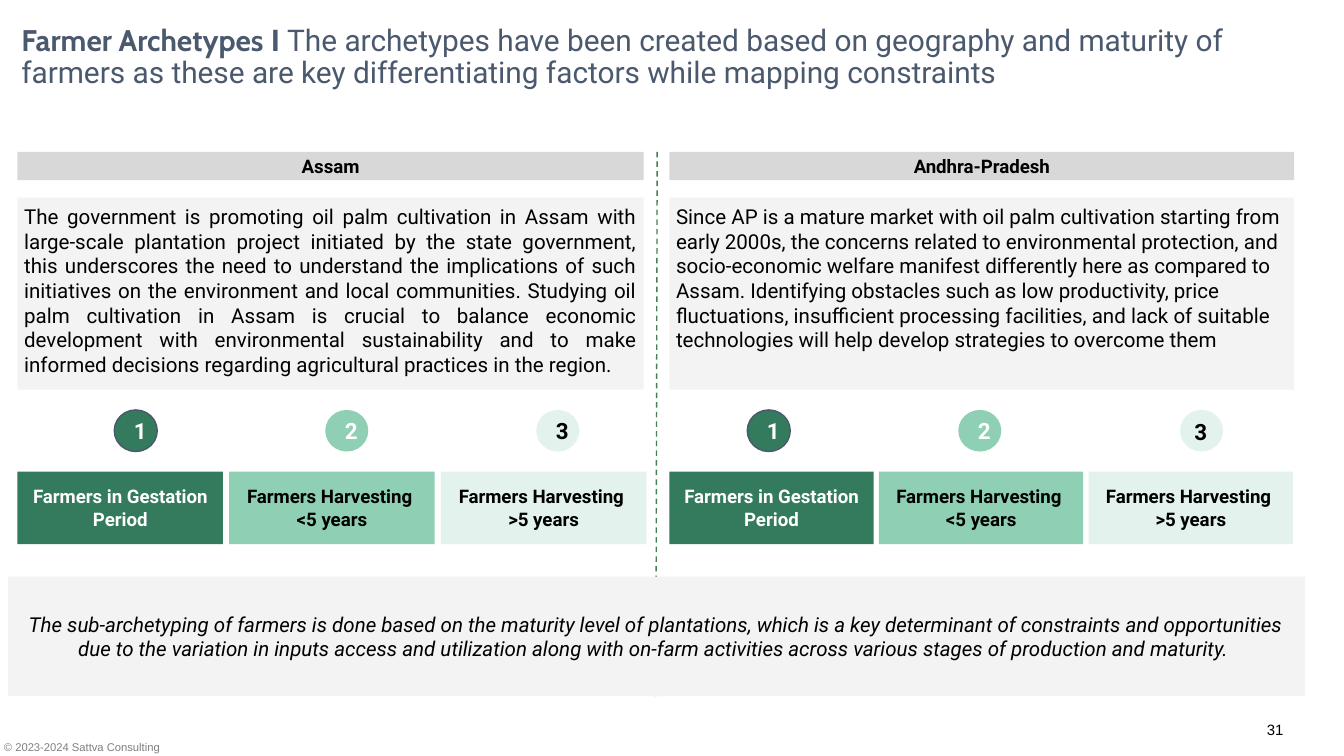
from pptx import Presentation
from pptx.dml.color import RGBColor
from pptx.enum.dml import MSO_LINE
from pptx.enum.shapes import MSO_CONNECTOR, MSO_SHAPE
from pptx.enum.text import MSO_ANCHOR, PP_ALIGN
from pptx.oxml.ns import qn
from pptx.util import Inches, Pt
from lxml import etree

COLORS = {
    "slate": "4A596E", "dark": "347A5C", "mid": "8FCFB4", "pale": "E3F2ED",
    "header": "D8D8D8", "panel": "F3F3F3", "divider": "448050",
    "black": "000000", "white": "FFFFFF", "gray": "7F7F7F",
}
C = {name: RGBColor.from_string(value) for name, value in COLORS.items()}
LEFT, CENTER = PP_ALIGN.LEFT, PP_ALIGN.CENTER
TOP, MIDDLE = MSO_ANCHOR.TOP, MSO_ANCHOR.MIDDLE
RECT, OVAL = MSO_SHAPE.RECTANGLE, MSO_SHAPE.OVAL

# Widescreen slide, 16:9
prs = Presentation()
prs.slide_width = Inches(10)
prs.slide_height = Inches(10) * 9 // 16
s = prs.slides.add_slide(prs.slide_layouts[6])


def write(sp, paragraphs, size, color="black", align=LEFT, anchor=TOP,
          inset=(0.1, 0.1), spacing=None):
    """Fill a shape with paragraphs, each a list of (text, font values)."""
    tf = sp.text_frame
    tf.word_wrap = True
    tf.vertical_anchor = anchor
    tf.margin_left = tf.margin_right = Inches(inset[0])
    tf.margin_top = tf.margin_bottom = Inches(inset[1])
    for i, runs in enumerate(paragraphs):
        p = tf.add_paragraph() if i else tf.paragraphs[0]
        p.alignment = align
        if spacing:
            p.line_spacing = spacing
        for text, values in runs:
            r = p.add_run()
            r.text = text
            r.font.size = Pt(size)
            r.font.color.rgb = C[color]
            for key, value in {"name": "Roboto", **values}.items():
                setattr(r.font, key, value)


def add_box(kind, at, fill=None):
    """Add a plain filled shape; without a kind, add a text box."""
    at = [Inches(v) for v in at]
    if kind is None:
        return s.shapes.add_textbox(*at)
    sp = s.shapes.add_shape(kind, *at)
    sp.shadow.inherit = False
    sp.fill.solid()
    sp.fill.fore_color.rgb = C[fill]
    sp.line.fill.background()
    return sp


# Divider between the two states
line = s.shapes.add_connector(MSO_CONNECTOR.STRAIGHT, Inches(4.89), Inches(1.13),
                              Inches(4.88), Inches(5.18))
line.line.color.rgb = C["divider"]
line.line.width = Pt(0.75)
line.line.dash_style = MSO_LINE.DASH
etree.SubElement(line._element.spPr, qn("a:effectLst"))

# Title
title = add_box(None, (0.06, 0.09, 9.65, 0.89))
write(title, [[
    ("Farmer Archetypes", {"name": "Cabin", "bold": True}),
    (" I ", {"bold": True}),
    ("The archetypes have been created based on geography and maturity of farmers "
     "as these are key differentiating factors while mapping constraints", {}),
]], 16, "slate", spacing=0.9)

# State columns: left, width, stage width and step, circle lefts, name, alignment, text
states = [
    (0.13, 4.66, 1.53, 1.575, (0.85, 2.42, 3.99), "Assam", PP_ALIGN.JUSTIFY,
     "The government is promoting oil palm cultivation in Assam with large-scale "
     "plantation project initiated by the state government, this underscores the need "
     "to understand the implications of such initiatives on the environment and local "
     "communities. Studying oil palm cultivation in Assam is crucial to balance economic "
     "development with environmental sustainability and to make informed decisions "
     "regarding agricultural practices in the region."),
    (4.98, 4.65, 1.52, 1.56, (5.56, 7.13, 8.78), "Andhra-Pradesh", LEFT,
     "Since AP is a mature market with oil palm cultivation starting from early 2000s, "
     "the concerns related to environmental protection, and socio-economic welfare "
     "manifest differently here as compared to Assam. Identifying obstacles such as low "
     "productivity, price fluctuations, insufficient processing facilities, and lack of "
     "suitable technologies will help develop strategies to overcome them"),
]
# Maturity stages: fill, number colour, label colour, label lines
stages = [
    ("dark", "white", "white", ["Farmers in Gestation Period"]),
    ("mid", "white", "black", ["Farmers Harvesting ", "<5 years"]),
    ("pale", "black", "black", ["Farmers Harvesting ", ">5 years"]),
]
BOLD = {"bold": True}

for left, width, stage_width, step, circles, name, align, description in states:
    header = add_box(RECT, (left, 1.13, width, 0.21), "header")
    write(header, [[(name, BOLD)]], 10, align=CENTER, anchor=MIDDLE)
    panel = add_box(RECT, (left, 1.47, width, 1.43), "panel")
    write(panel, [[(description, {})]], 11, align=align, inset=(0.05, 0.05))

    for i, (fill, number_color, label_color, label) in enumerate(stages):
        circle = add_box(OVAL, (circles[i], 3.05, 0.32, 0.31), fill)
        if fill == "dark":
            circle.line.color.rgb = C["slate"]
            circle.line.width = Pt(0.75)
        number = [[(str(i + 1), BOLD)]]
        if circles[i] == 8.78:
            # The last number has a text box of its own
            write(add_box(None, (8.7, 3.01, 0.47, 0.4)), number, 12, number_color, CENTER)
        else:
            write(circle, number, 12, number_color, anchor=MIDDLE)
        stage = add_box(RECT, (left + i * step, 3.51, stage_width, 0.54), fill)
        write(stage, [[(text, BOLD)] for text in label], 10, label_color, CENTER)

# Closing note
note = add_box(RECT, (0.06, 4.29, 9.65, 0.89), "panel")
write(note, [[(
    "The sub-archetyping of farmers is done based on the maturity level of plantations, "
    "which is a key determinant of constraints and opportunities due to the variation in "
    "inputs access and utilization along with on-farm activities across various stages of "
    "production and maturity. ", {"italic": True})]], 11, align=CENTER, anchor=MIDDLE)

# Footer
footer = add_box(None, (-0.04, 5.47, 1.46, 0.18))
write(footer, [[("© 2023-2024 Sattva Consulting", {"name": "Arial"})]], 6, "gray",
      inset=(0.07, 0.04))
page = add_box(None, (9.01, 5.33, 0.6, 0.43))
write(page, [[("31", {"name": "Arial"})]], 8, align=PP_ALIGN.RIGHT, inset=(0.06, 0.03))

prs.save("out.pptx")
